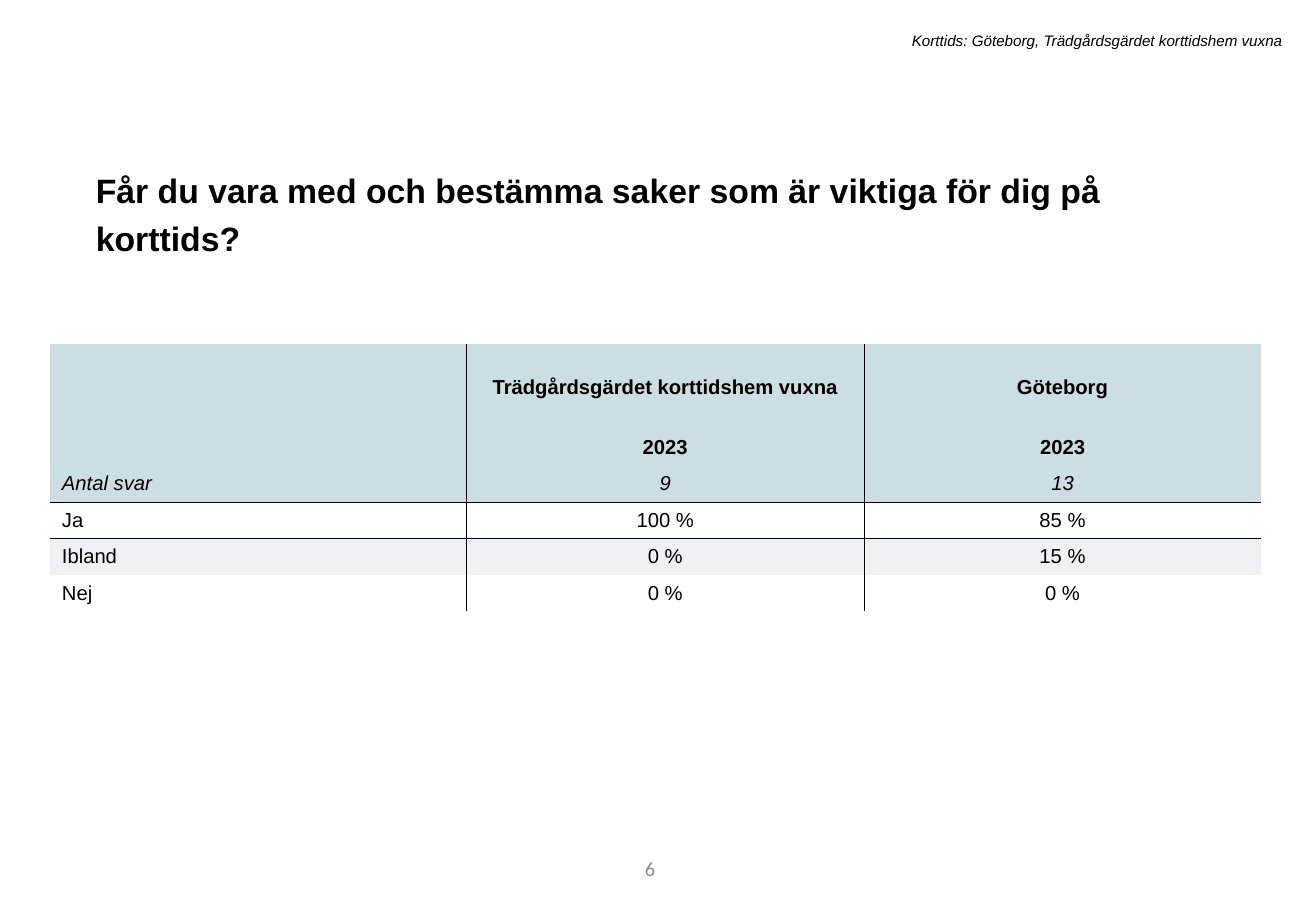
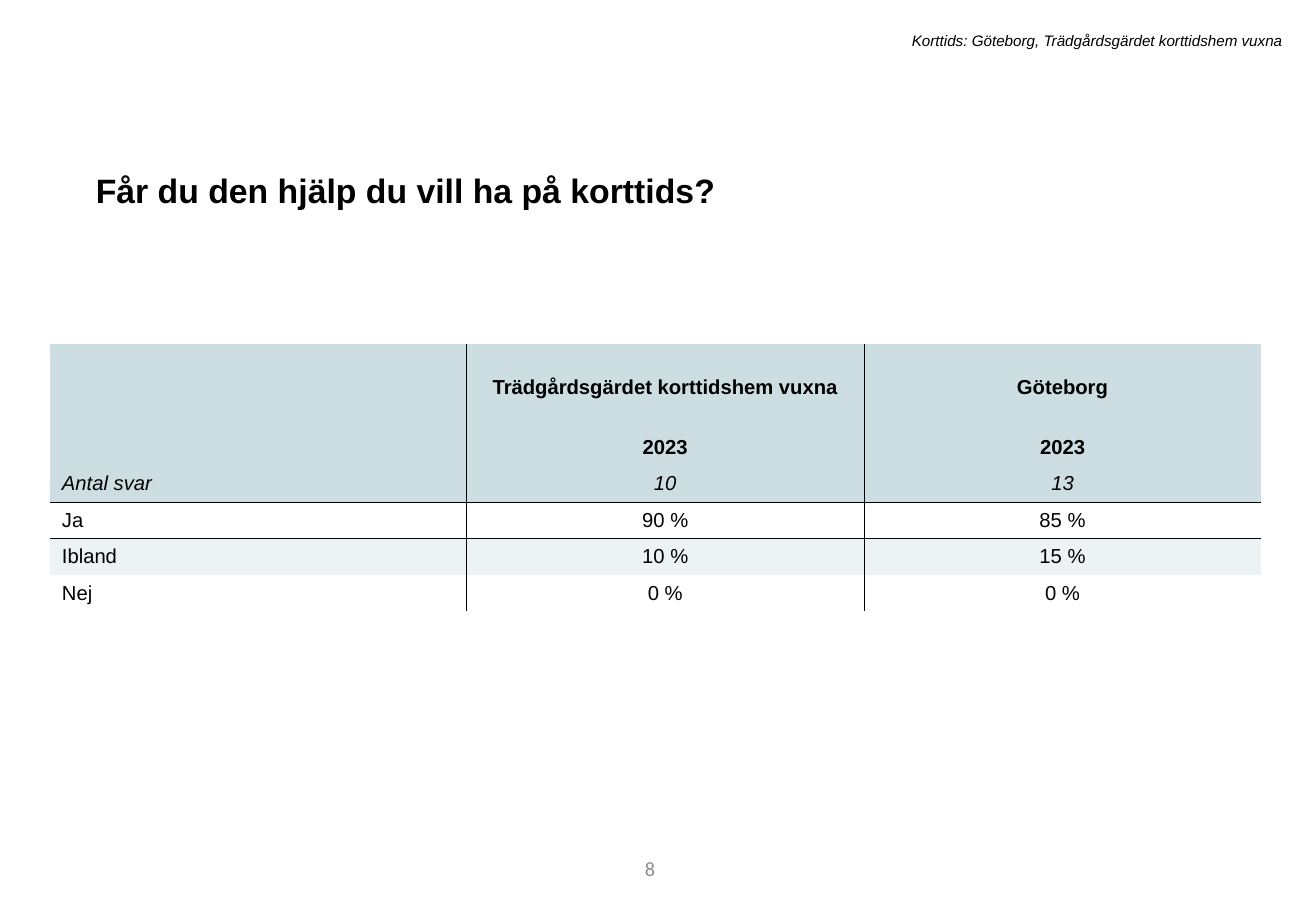
from dataclasses import dataclass

from lxml import etree
from pptx import Presentation
from pptx.dml.color import RGBColor
from pptx.enum.text import MSO_ANCHOR, MSO_AUTO_SIZE, PP_ALIGN
from pptx.oxml.ns import qn
from pptx.util import Inches, Pt

LEFT, CENTER, RIGHT = PP_ALIGN.LEFT, PP_ALIGN.CENTER, PP_ALIGN.RIGHT
TOP, MIDDLE, BOTTOM = MSO_ANCHOR.TOP, MSO_ANCHOR.MIDDLE, MSO_ANCHOR.BOTTOM
GROW, FIXED = MSO_AUTO_SIZE.SHAPE_TO_FIT_TEXT, MSO_AUTO_SIZE.NONE
PLAIN_STYLE = "{2D5ABB26-0587-4C30-8999-92F81FD0307C}"


@dataclass(frozen=True)
class Theme:
    ink: str = "000000"
    gray: str = "8C8C8C"
    head: str = "CCDEE1"
    band: str = "EDF3F4"
    font: str = "Arial"
    num_font: str = "Calibri"
    title: int = 20
    body: int = 12
    small: int = 9
    rule: float = 0.25


THEME = Theme()

# Table grid and shared wording
COLS = [3.43, 3.27, 3.27]
ROWS = [0.5, 0.5, 0.3, 0.3, 0.3, 0.3]
HEAD_ROWS = 3
UNIT = "Trädgårdsgärdet korttidshem vuxna"
CITY = "Göteborg"
SOURCE = f"Korttids: {CITY}, {UNIT}"
ANSWERS = ["Ja", "Ibland", "Nej"]

# Page, question, number of replies, shares in percent (unit, city)
PAGES = [
    (6, "Får du vara med och bestämma saker som är viktiga för dig på korttids?",
     (9, 13), [(100, 85), (0, 15), (0, 0)]),
    (8, "Får du den hjälp du vill ha på korttids?",
     (10, 13), [(90, 85), (10, 15), (0, 0)]),
]


def put_text(frame, text, size=THEME.body, font=THEME.font, color=THEME.ink,
             bold=False, italic=False, align=LEFT, line=None, before=None):
    """Write one formatted paragraph into a text frame."""
    para = frame.paragraphs[0]
    para.alignment = align
    if line:
        para.line_spacing = line
    if before:
        para.space_before = Pt(before)
    run = para.add_run()
    run.text = text
    run.font.name, run.font.size = font, Pt(size)
    run.font.bold, run.font.italic = bold, italic
    run.font.color.rgb = RGBColor.from_string(color)


def add_text(slide, text, box, anchor=TOP, fit=GROW, **style):
    frame = slide.shapes.add_textbox(*map(Inches, box)).text_frame
    frame.word_wrap = True
    frame.auto_size = fit
    frame.vertical_anchor = anchor
    put_text(frame, text, **style)


def add_rules(cell, sides):
    """Draw thin borders on the given sides, in the order L, R, T, B."""
    props = cell._tc.get_or_add_tcPr()
    for spot, side in enumerate(sides):
        line = etree.Element(qn(f"a:ln{side}"), w=str(Pt(THEME.rule)))
        fill = etree.SubElement(line, qn("a:solidFill"))
        etree.SubElement(fill, qn("a:srgbClr"), val=THEME.ink)
        props.insert(spot, line)


def style_cell(cell, row, col):
    """Fill and rule a cell by its place in the grid."""
    if row < HEAD_ROWS:
        shade = THEME.head
    else:
        shade = THEME.band if (row - HEAD_ROWS) % 2 else None
    if shade:
        cell.fill.solid()
        cell.fill.fore_color.rgb = RGBColor.from_string(shade)
    else:
        cell.fill.background()
    edges = {"L": col > 0, "R": col < len(COLS) - 1,
             "T": row == HEAD_ROWS, "B": row == HEAD_ROWS - 1}
    add_rules(cell, [side for side, shown in edges.items() if shown])


def add_grid(slide, data):
    shape = slide.shapes.add_table(
        len(ROWS), len(COLS), Inches(0.41), Inches(2.83),
        Inches(sum(COLS)), Inches(sum(ROWS)))
    table = shape.table
    table.first_row = table.horz_banding = False
    for style in shape.element.iter(qn("a:tableStyleId")):
        style.text = PLAIN_STYLE
    for part, width in zip(table.columns, COLS):
        part.width = Inches(width)
    for part, height in zip(table.rows, ROWS):
        part.height = Inches(height)

    for row, texts in enumerate(data):
        label = row < HEAD_ROWS - 1
        for col, text in enumerate(texts):
            cell = table.cell(row, col)
            style_cell(cell, row, col)
            cell.vertical_anchor = BOTTOM if label else MIDDLE
            if text:
                put_text(cell.text_frame, text, bold=label,
                         italic=row == HEAD_ROWS - 1,
                         align=CENTER if col else LEFT)


def add_page(deck, page, title, counts, shares):
    slide = deck.slides.add_slide(deck.slide_layouts[6])
    # Page number, question and source line
    add_text(slide, str(page), (3.05, 6.95, 2.44, 0.4), anchor=MIDDLE,
             fit=FIXED, font=THEME.num_font, color=THEME.gray, align=RIGHT)
    add_text(slide, title, (0.69, 1.28, 9.4, 0.47), size=THEME.title,
             bold=True, line=1.2, before=10)
    add_text(slide, SOURCE, (1.79, 0.21, 8.86, 0.25), size=THEME.small,
             italic=True, align=RIGHT)
    # Results
    data = [["", UNIT, CITY], ["", "2023", "2023"],
            ["Antal svar", *map(str, counts)]]
    for answer, pair in zip(ANSWERS, shares):
        data.append([answer, *(f"{share} %" for share in pair)])
    add_grid(slide, data)


def main():
    deck = Presentation()
    deck.slide_width, deck.slide_height = Inches(10.83), Inches(7.5)
    for page in PAGES:
        add_page(deck, *page)
    deck.save("out.pptx")


if __name__ == "__main__":
    main()
